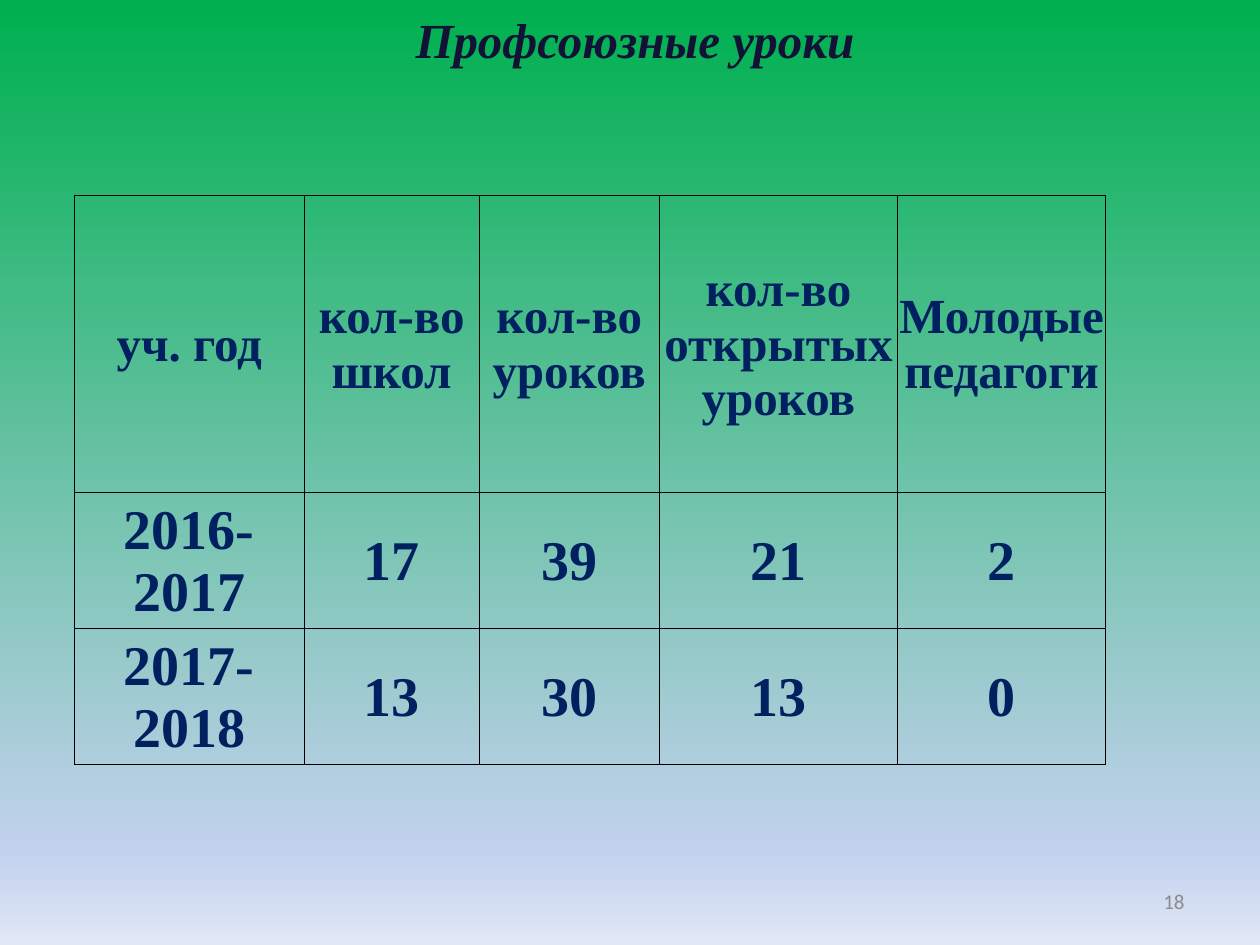
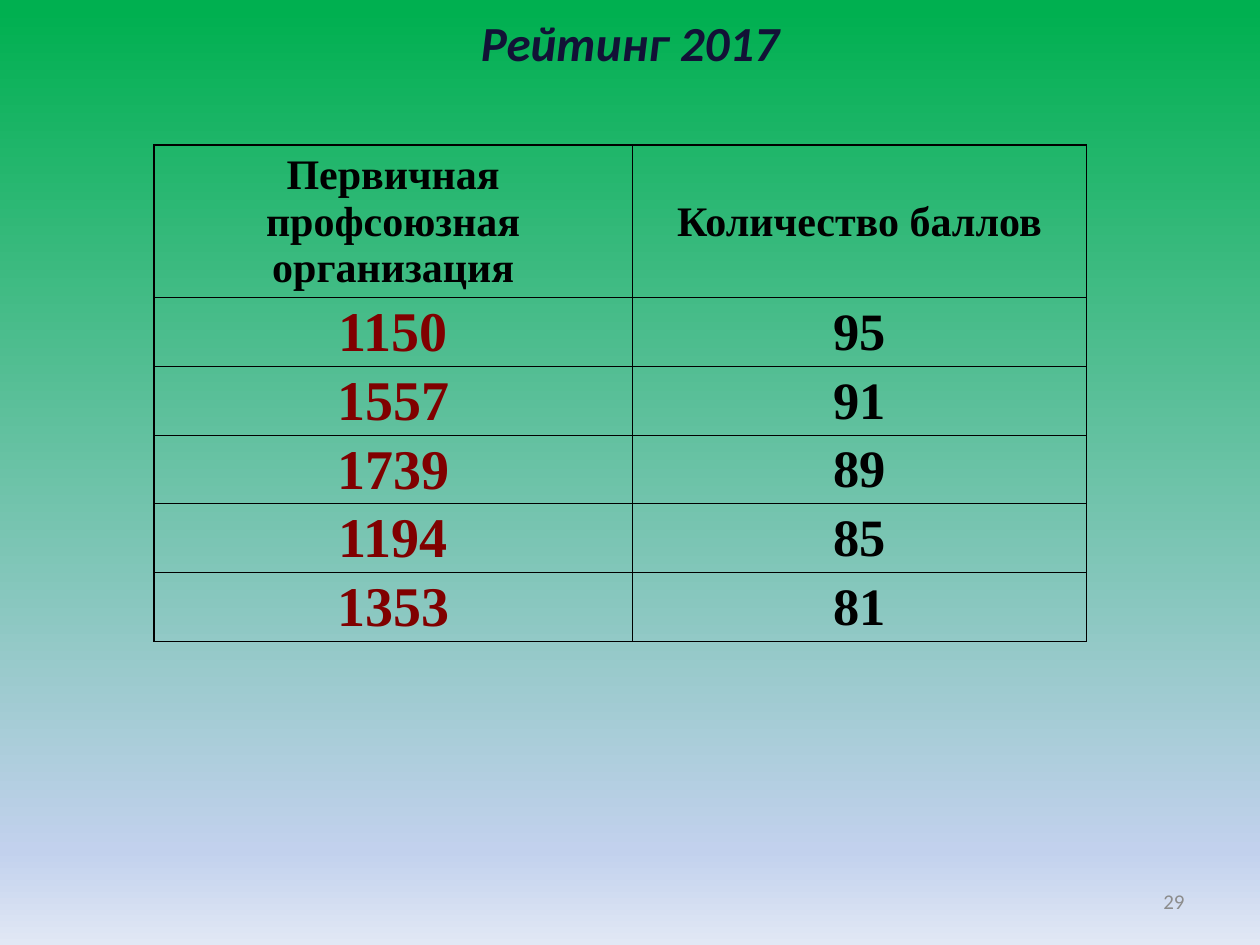
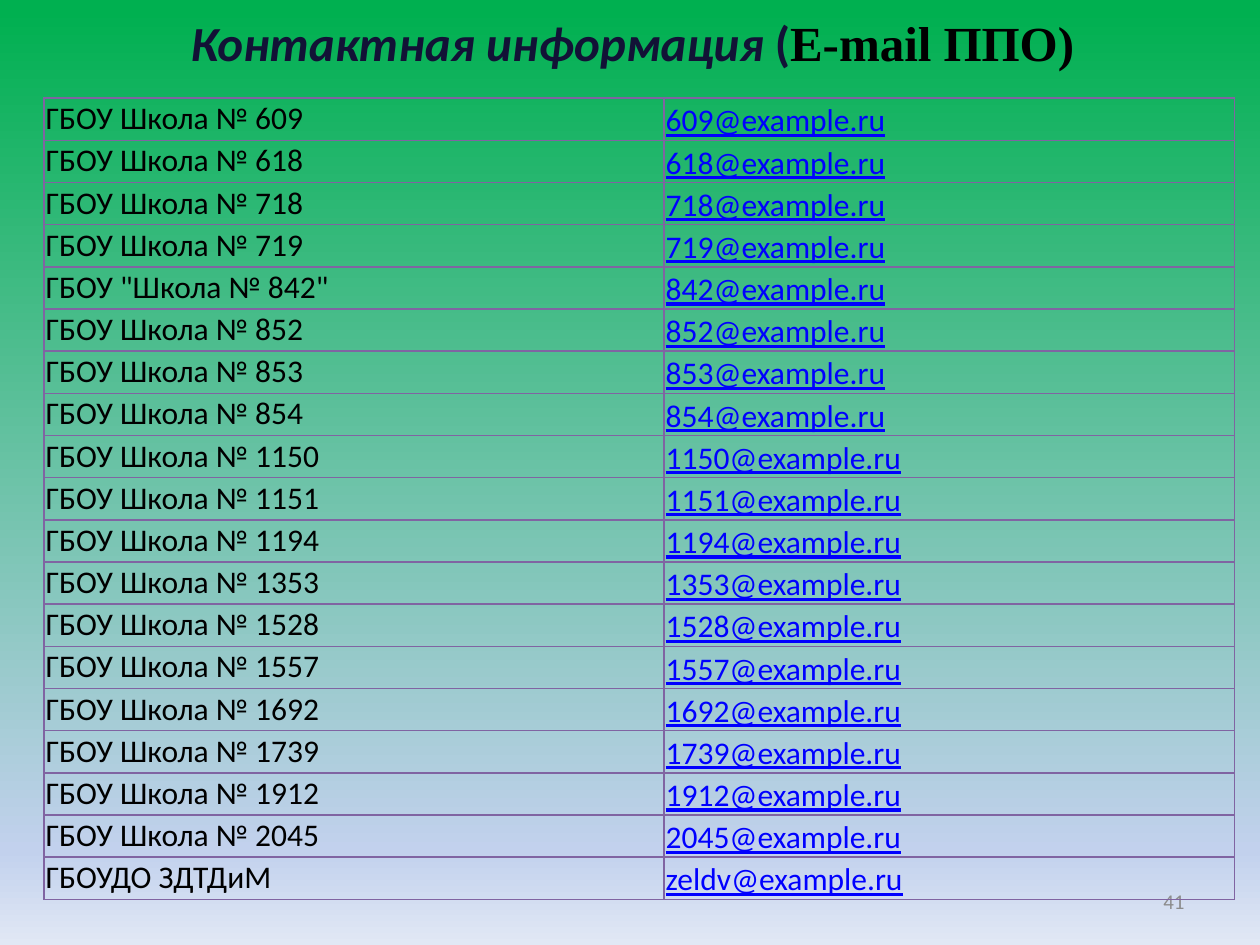
from lxml.etree import SubElement
from pptx import Presentation
from pptx.dml.color import RGBColor
from pptx.enum.text import MSO_ANCHOR, PP_ALIGN
from pptx.oxml.ns import qn
from pptx.util import Cm, Pt

SERIF = "Times New Roman"
SANS = "Calibri"
BLACK = "000000"
NAVY = "002060"
PURPLE = "8064A2"
BACKDROP = [(1, "00B050"), (90, "C2D1ED"), (100, "E1E8F5")]

TITLE = {"name": SANS, "size": 28, "color": "121236", "bold": True, "italic": True}
SERIF_TITLE = {**TITLE, "name": SERIF}
PAGE_NUMBER = {"name": SANS, "size": 12, "color": "8C8C8C"}
LESSON_HEADER = {"name": SERIF, "size": 28, "color": NAVY, "bold": True}
LESSON_VALUE = {**LESSON_HEADER, "size": 32}
RATING_HEADER = {"name": SERIF, "size": 24, "color": BLACK, "bold": True}
RATING_SCHOOL = {**RATING_HEADER, "size": 32, "color": "800000"}
RATING_SCORE = {**RATING_HEADER, "size": 30}
CONTACT_SCHOOL = {"name": SANS, "size": 18, "color": BLACK}
CONTACT_MAIL = {**CONTACT_SCHOOL, "color": "0000FF", "underline": True}

CELL_CENTER = {"vertical_anchor": MSO_ANCHOR.MIDDLE}
CELL_TOP = {"vertical_anchor": MSO_ANCHOR.TOP}
CELL_BOTTOM = {"vertical_anchor": MSO_ANCHOR.BOTTOM}
CELL_MARGINS = {
    "margin_left": Cm(0.03),
    "margin_right": Cm(0.03),
    "margin_top": Cm(0.03),
    "margin_bottom": Cm(0),
}

LESSONS = [
    ["уч. год", "кол-во школ", "кол-во уроков", "кол-во открытых уроков", "Молодые педагоги"],
    ["2016-2017", "17", "39", "21", "2"],
    ["2017-2018", "13", "30", "13", "0"],
]
RATING = [
    ["Первичная профсоюзная организация", "Количество баллов"],
    ["1150", "95"],
    ["1557", "91"],
    ["1739", "89"],
    ["1194", "85"],
    ["1353", "81"],
]
SCHOOLS = [609, 618, 718, 719, 842, 852, 853, 854, 1150, 1151,
           1194, 1353, 1528, 1557, 1692, 1739, 1912, 2045]
QUOTED_SCHOOL = 842
MAIL_DOMAIN = "example.ru"


def rgb(code):
    return RGBColor.from_string(code)


def apply(target, values):
    for attribute, value in values.items():
        setattr(target, attribute, value)


def add_run(paragraph, words, style):
    run = paragraph.add_run()
    run.text = words
    values = {**style, "size": Pt(style["size"])}
    run.font.color.rgb = rgb(values.pop("color"))
    apply(run.font, values)


def add_text(slide, box, runs, align, anchor):
    frame = slide.shapes.add_textbox(*map(Cm, box)).text_frame
    apply(frame, {"word_wrap": True, "vertical_anchor": anchor})
    paragraph = frame.paragraphs[0]
    paragraph.alignment = align
    for words, style in runs:
        add_run(paragraph, words, style)


def paint_backdrop(master):
    fill = master.background.fill
    fill.gradient()
    fill.gradient_angle = 270
    stops = master.element.find(".//" + qn("a:gsLst"))
    for stop in list(stops):
        stops.remove(stop)
    for percent, code in BACKDROP:
        stop = SubElement(stops, qn("a:gs"), pos=str(percent * 1000))
        SubElement(stop, qn("a:srgbClr"), val=code)


def add_page(deck, number, title_box, title_runs, title_anchor=MSO_ANCHOR.TOP):
    slide = deck.slides.add_slide(deck.slide_layouts[6])
    add_text(slide, (18.2, 17.65, 5.93, 1.02), [(str(number), PAGE_NUMBER)],
             PP_ALIGN.RIGHT, MSO_ANCHOR.MIDDLE)
    add_text(slide, title_box, title_runs, PP_ALIGN.CENTER, title_anchor)
    return slide


def draw_borders(cell, color, widths):
    properties = cell._tc.get_or_add_tcPr()
    for side, width in zip("LRTB", widths):
        line = SubElement(properties, qn(f"a:ln{side}"), w=str(Pt(width)))
        fill = SubElement(line, qn("a:solidFill"))
        SubElement(fill, qn("a:srgbClr"), val=color)


def add_grid(slide, left, top, widths, heights, rows, style_for, align,
             border=BLACK, inner=0.5, outer=0.5):
    table = slide.shapes.add_table(
        len(rows), len(widths), Cm(left), Cm(top), Cm(sum(widths)), Cm(sum(heights))
    ).table
    apply(table, {"first_row": False, "horz_banding": False})
    for column, width in zip(table.columns, widths):
        column.width = Cm(width)
    for row, height in zip(table.rows, heights):
        row.height = Cm(height)
    for r, row in enumerate(rows):
        for c, words in enumerate(row):
            cell = table.cell(r, c)
            font, placement = style_for(r, c)
            apply(cell, {**CELL_MARGINS, **placement})
            draw_borders(cell, border, (
                outer if c == 0 else inner,
                outer if c == len(widths) - 1 else inner,
                outer if r == 0 else inner,
                inner,
            ))
            cell.fill.background()
            paragraph = cell.text_frame.paragraphs[0]
            paragraph.alignment = align
            add_run(paragraph, words, font)


def lesson_style(row, column):
    return (LESSON_VALUE if row else LESSON_HEADER), CELL_CENTER


def rating_style(row, column):
    if row == 0:
        return RATING_HEADER, CELL_CENTER
    return (RATING_SCORE if column else RATING_SCHOOL), CELL_CENTER


def contact_style(row, column):
    return (CONTACT_MAIL, CELL_BOTTOM) if column else (CONTACT_SCHOOL, CELL_TOP)


def contact_rows():
    rows = []
    for number in SCHOOLS:
        school = f"Школа № {number}"
        if number == QUOTED_SCHOOL:
            school = f'"{school}"'
        rows.append([f"ГБОУ {school}", f"{number}@{MAIL_DOMAIN}"])
    return rows + [["ГБОУДО ЗДТДиМ", f"zeldv@{MAIL_DOMAIN}"]]


def lessons_slide(deck):
    slide = add_page(deck, 18, (0.1, 0.18, 25.4, 1.2),
                     [("Профсоюзные уроки", SERIF_TITLE)], MSO_ANCHOR.MIDDLE)
    add_grid(slide, 1.5, 3.93, [4.63, 3.53, 3.63, 4.8, 4.2], [6, 2.53, 2.53],
             LESSONS, lesson_style, PP_ALIGN.CENTER)


def rating_slide(deck):
    slide = add_page(deck, 29, (0, 0.13, 25.4, 1.45), [("Рейтинг 2017", TITLE)])
    add_grid(slide, 3.1, 2.92, [9.65, 9.15], [3.07] + [1.38] * (len(RATING) - 1),
             RATING, rating_style, PP_ALIGN.CENTER, outer=1)


def contacts_slide(deck):
    slide = add_page(deck, 41, (0.1, 0.13, 25.3, 1.45), [
        ("Контактная информация ", TITLE),
        ("(", {**TITLE, "italic": False}),
        ("E-mail ППО)", {**SERIF_TITLE, "italic": False, "color": BLACK}),
    ])
    contacts = contact_rows()
    add_grid(slide, 0.89, 1.98, [12.5, 11.5], [0.85] * len(contacts),
             contacts, contact_style, PP_ALIGN.LEFT, PURPLE, 1, 1)


def main():
    deck = Presentation()
    apply(deck, {"slide_width": Cm(25.4), "slide_height": Cm(19.05)})
    paint_backdrop(deck.slide_master)
    lessons_slide(deck)
    rating_slide(deck)
    contacts_slide(deck)
    deck.save("out.pptx")


if __name__ == "__main__":
    main()
